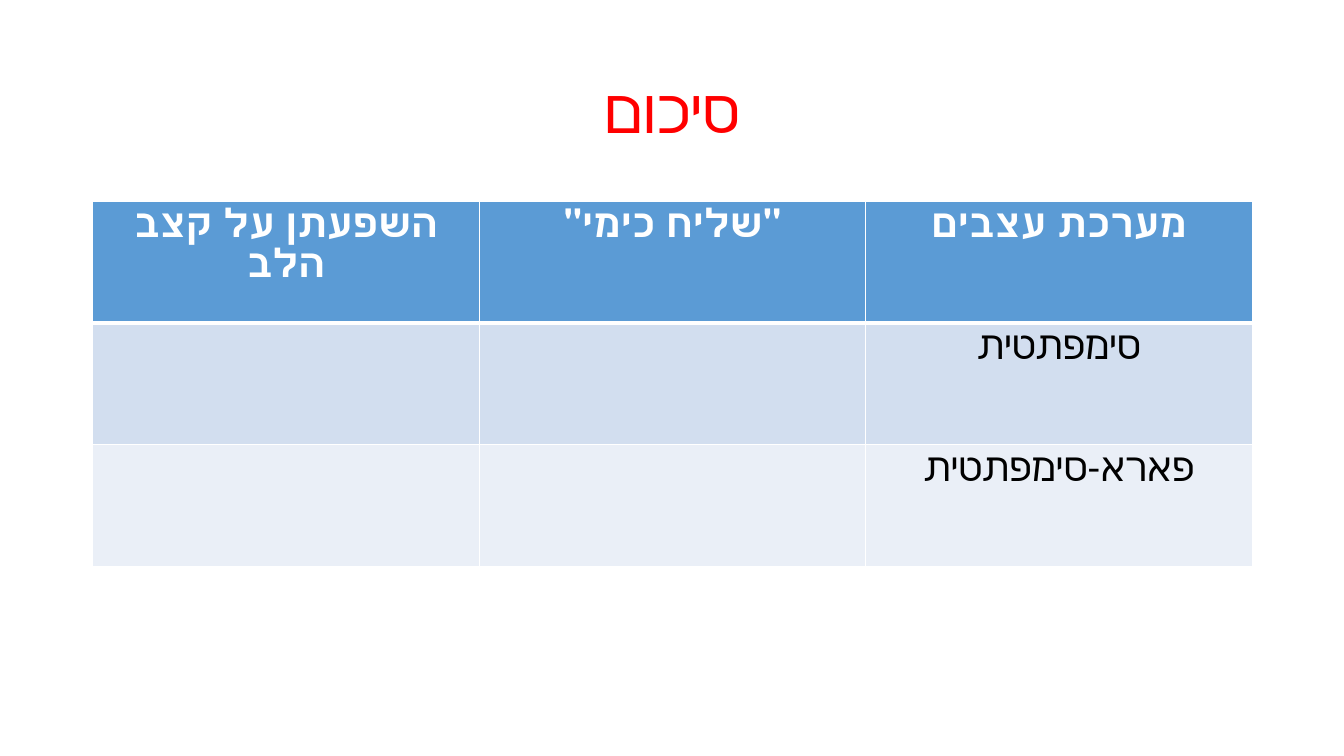
from lxml import etree
from pptx import Presentation
from pptx import util as u
from pptx.dml.color import RGBColor
from pptx.enum import text
from pptx.oxml.ns import qn

FONT = "Calibri"
HEADINGS = ["השפעתן על קצב הלב", '"שליח כימי"', "מערכת עצבים"]
SYSTEMS = ["סימפתטית", "פארא-סימפתטית"]
ROWS = [HEADINGS] + [["", "", system] for system in SYSTEMS]
ROW_FILLS = ["5B9BD5", "D2DEEF", "EAEFF7"]
TITLE_FORMAT = {"size": u.Pt(44), "name": FONT, "bold": False}
HEADING_FORMAT = {"size": u.Pt(28), "name": FONT, "bold": True}
SYSTEM_FORMAT = {**HEADING_FORMAT, "bold": False}


def colour(hex_code):
    """Turn a hex string into a colour."""
    return RGBColor.from_string(hex_code)


def write_hebrew(paragraph, wording, font_format, hex_code):
    """Write one centred right-to-left line."""
    paragraph.alignment = text.PP_ALIGN.CENTER
    paragraph._p.get_or_add_pPr().set("rtl", "1")
    run = paragraph.add_run()
    run.text = wording
    for key, value in font_format.items():
        setattr(run.font, key, value)
    run.font.color.rgb = colour(hex_code)
    run._r.get_or_add_rPr().set("lang", "he-IL")


def set_borders(cell, widths):
    """Draw white borders with a width in points for each side."""
    properties = cell._tc.get_or_add_tcPr()
    for position, (side, width) in enumerate(widths.items()):
        border = etree.Element(qn(f"a:ln{side}"), w=str(u.Pt(width)))
        fill = etree.SubElement(border, qn("a:solidFill"))
        etree.SubElement(fill, qn("a:srgbClr"), val="FFFFFF")
        properties.insert(position, border)


def add_title(slide, left, top, width, height):
    """Place the red title in its box."""
    frame = slide.shapes.add_textbox(left, top, width, height).text_frame
    frame.word_wrap = True
    frame.vertical_anchor = text.MSO_ANCHOR.MIDDLE
    frame.paragraphs[0].line_spacing = 0.9
    write_hebrew(frame.paragraphs[0], "סיכום", TITLE_FORMAT, "FF0000")


def add_summary(slide, left, top, width, height):
    """Place the table comparing the nervous systems."""
    summary = slide.shapes.add_table(
        len(ROWS), len(HEADINGS), left, top, width, height).table
    for row, (wordings, fill) in enumerate(zip(ROWS, ROW_FILLS)):
        is_heading = row == 0
        font_format = HEADING_FORMAT if is_heading else SYSTEM_FORMAT
        ink = "FFFFFF" if is_heading else "000000"
        widths = {"L": 1, "R": 1, "T": 3 if row == 1 else 1,
                  "B": 3 if is_heading else 1}
        for column, wording in enumerate(wordings):
            cell = summary.cell(row, column)
            cell.fill.solid()
            cell.fill.fore_color.rgb = colour(fill)
            set_borders(cell, widths)
            if wording:
                write_hebrew(cell.text_frame.paragraphs[0], wording,
                             font_format, ink)


def main():
    """Build and save the slide."""
    deck = Presentation()
    deck.slide_width, deck.slide_height = u.Inches(13.33), u.Inches(7.5)
    slide = deck.slides.add_slide(deck.slide_layouts[6])
    left, width = u.Inches(0.92), u.Inches(11.5)
    add_title(slide, left, u.Inches(0.4), width, u.Inches(1.45))
    add_summary(slide, left, u.Inches(2), width, u.Inches(3.62))
    deck.save("out.pptx")


if __name__ == "__main__":
    main()
